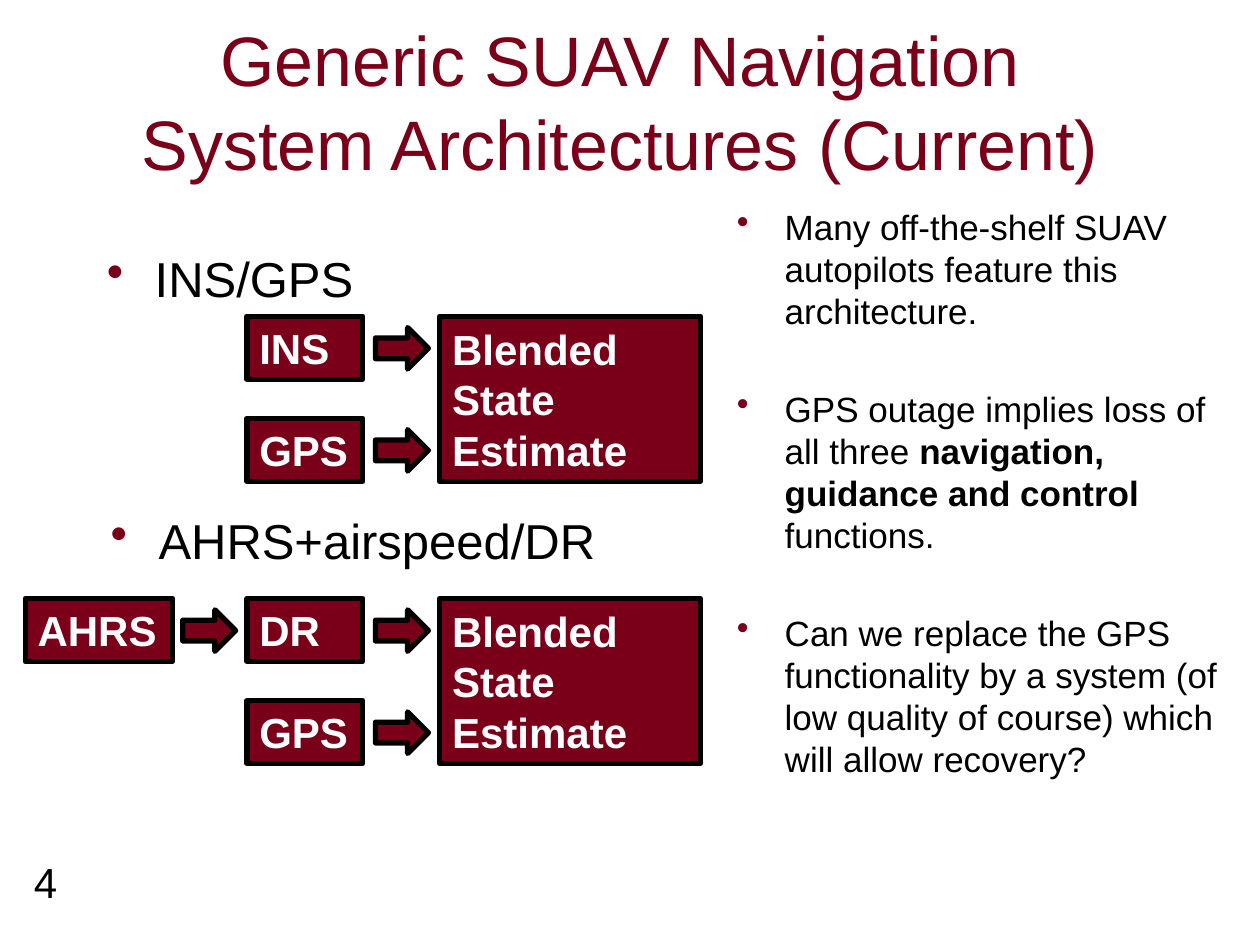
import pptx
import pptx.util
import pptx.dml.color
import pptx.enum.shapes
import pptx.enum.text
import lxml.etree
import pptx.oxml.ns

Inches = pptx.util.Inches
Pt = pptx.util.Pt
RGBColor = pptx.dml.color.RGBColor
SHAPE = pptx.enum.shapes.MSO_SHAPE
ALIGN = pptx.enum.text.PP_ALIGN
ANCHOR = pptx.enum.text.MSO_ANCHOR

MAROON = RGBColor(0x7A, 0x00, 0x19)
BLACK = RGBColor(0x00, 0x00, 0x00)
WHITE = RGBColor(0xFF, 0xFF, 0xFF)


def write(shape, paras, size, color=BLACK, bold=False, align=ALIGN.LEFT,
          anchor=ANCHOR.TOP, bullet=False, gap=0):
    """Fill a shape with paragraphs, each a list of runs; **run is bold."""
    frame = shape.text_frame
    frame.word_wrap = True
    frame.vertical_anchor = anchor
    for i, runs in enumerate(paras):
        para = frame.paragraphs[0] if i == 0 else frame.add_paragraph()
        para.alignment = align
        if i and gap:
            para.space_before = Pt(gap)
        if bullet:
            props = para._p.get_or_add_pPr()
            props.set("marL", str(Inches(0.38)))
            props.set("indent", str(Inches(-0.38)))
            tint = lxml.etree.SubElement(props, pptx.oxml.ns.qn("a:buClr"))
            lxml.etree.SubElement(tint, pptx.oxml.ns.qn("a:srgbClr"), val=str(MAROON))
            lxml.etree.SubElement(props, pptx.oxml.ns.qn("a:buChar"), char="•")
        for text in runs:
            run = para.add_run()
            run.text = text.removeprefix("**")
            run.font.name = "Arial"
            run.font.size = Pt(size)
            run.font.bold = bold or text.startswith("**")
            run.font.color.rgb = color


def block(kind, left, top, width, height):
    """Add a maroon shape with a thick black outline."""
    shape = slide.shapes.add_shape(
        kind, Inches(left), Inches(top), Inches(width), Inches(height))
    shape.shadow.inherit = False
    shape.fill.solid()
    shape.fill.fore_color.rgb = MAROON
    shape.line.color.rgb = BLACK
    shape.line.width = Pt(3)
    return shape


deck = pptx.Presentation()
deck.slide_width = Inches(10)
deck.slide_height = Inches(7.5)
slide = deck.slides.add_slide(deck.slide_layouts[6])

# Title, headings, remarks and page number
notes = [
    ["Many off-the-shelf SUAV autopilots feature this architecture."],
    ["GPS outage implies loss of all three ",
     "**navigation, guidance and control ", "functions."],
    ["Can we replace the GPS functionality by a system (of low quality of "
     "course) which will allow recovery?"],
]
title = [["Generic SUAV Navigation System Architectures (Current)"]]
texts = [
    (0.67, 0.17, 8.5, 1.25, title,
     dict(size=40, color=MAROON, align=ALIGN.CENTER, anchor=ANCHOR.MIDDLE)),
    (0.75, 1.92, 2.23, 0.5, [["INS/GPS"]], dict(size=28, bullet=True)),
    (0.78, 4, 4.79, 0.52, [["AHRS+airspeed/DR"]], dict(size=28, bullet=True)),
    (5.75, 1.58, 4.17, 4.33, notes, dict(size=20, bullet=True, gap=32)),
    (0.17, 6.75, 1.83, 0.5, [["4"]], dict(size=24)),
]
for left, top, width, height, paras, style in texts:
    box = slide.shapes.add_textbox(
        Inches(left), Inches(top), Inches(width), Inches(height))
    write(box, paras, **style)

# Two diagrams: a pair of sources, each with an arrow into the estimate
label = dict(size=24, color=WHITE, bold=True, anchor=ANCHOR.MIDDLE)
ROW = 0.81
DROP = 0.09
for top, first in [(2.51, "INS"), (4.75, "DR")]:
    for i, name in enumerate([first, "GPS"]):
        row = top + i * ROW
        write(block(SHAPE.RECTANGLE, 1.96, row, 0.92, 0.5), [[name]], **label)
        block(SHAPE.RIGHT_ARROW, 2.98, row + DROP, 0.42, 0.33)
    write(block(SHAPE.RECTANGLE, 3.49, top, 2.07, 1.31),
          [["Blended"], ["State"], ["Estimate"]], **label)

# The lower diagram starts from AHRS
write(block(SHAPE.RECTANGLE, 0.2, top, 1.17, 0.5), [["AHRS"]], **label)
block(SHAPE.RIGHT_ARROW, 1.45, top + DROP, 0.42, 0.33)

deck.save("out.pptx")
